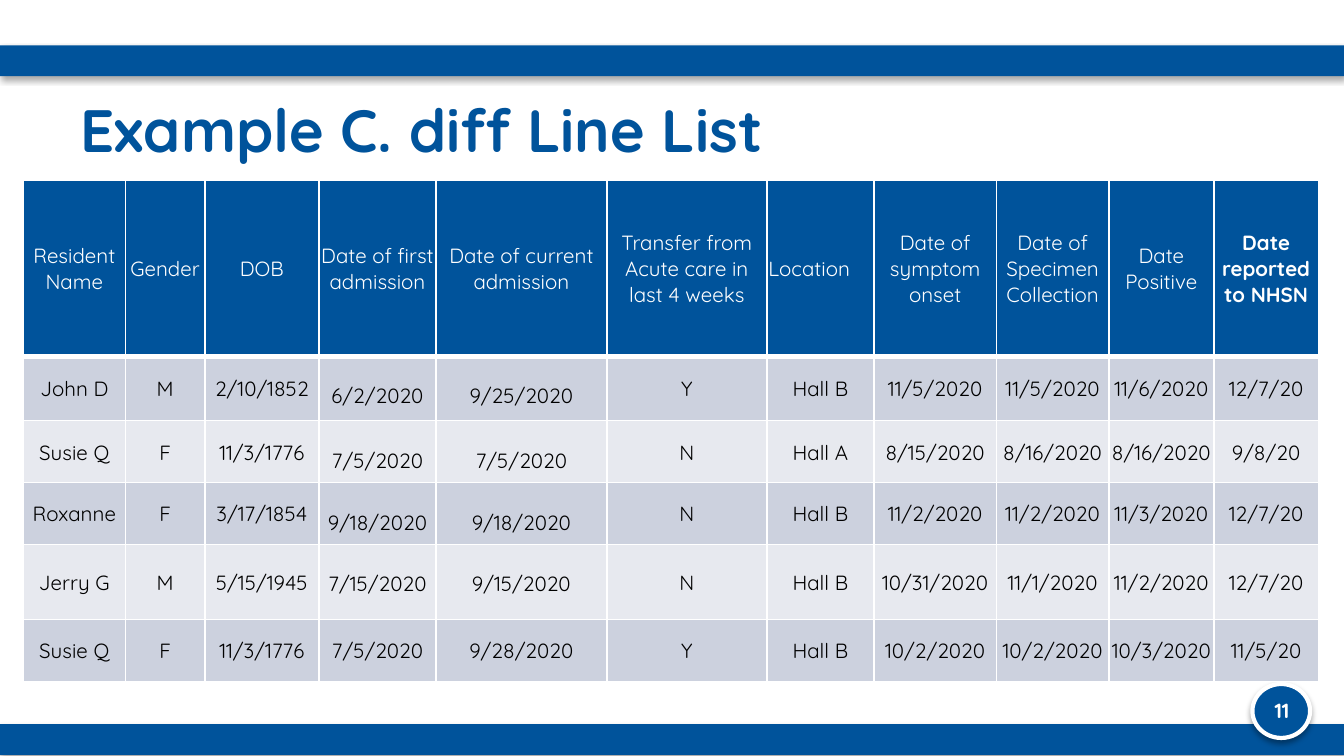
from dataclasses import dataclass

from lxml import etree
from pptx import Presentation
from pptx.dml.color import RGBColor
from pptx.enum.shapes import MSO_SHAPE
from pptx.enum.text import MSO_ANCHOR, MSO_AUTO_SIZE, PP_ALIGN
from pptx.oxml.ns import qn
from pptx.util import Cm, Pt

RECT, OVAL = MSO_SHAPE.RECTANGLE, MSO_SHAPE.OVAL
TOP, MIDDLE = MSO_ANCHOR.TOP, MSO_ANCHOR.MIDDLE
LEFT, CENTER = PP_ALIGN.LEFT, PP_ALIGN.CENTER
NO_AUTOFIT = MSO_AUTO_SIZE.NONE

FONT = "Quicksand"
BLUE, WHITE, BLACK = "00539B", "FFFFFF", "000000"
BANDS = ("CCD1DE", "E7E9EF")
INSET = 0.03
DROPPED_INSET = 0.51  # one text line below the cell's top edge
ADMISSION_COLS = (3, 4)


@dataclass
class Column:
    header: str
    width: float
    align: PP_ALIGN = CENTER
    bold: bool = False


@dataclass
class Case:
    height: float
    values: tuple[str, ...]
    dropped: bool = True  # admission dates sit lower than the other values


@dataclass
class MasterShape:
    kind: MSO_SHAPE
    box: tuple[float, float, float, float]
    outline: float = 0


COLUMNS = [
    Column("Resident Name", 1.93),
    Column("Gender", 1.5),
    Column("DOB", 2.16),
    Column("Date of first admission", 2.21),
    Column("Date of current admission", 3.23),
    Column("Transfer from Acute care in last 4 weeks", 3.02),
    Column("Location", 2.03, align=LEFT),
    Column("Date of symptom onset", 2.31),
    Column("Date of Specimen Collection", 2.13),
    Column("Date Positive", 1.98),
    Column("Date reported to NHSN", 1.98, bold=True),
]
HEADER_HEIGHT = 3.33
CASES = [
    Case(1.22, ("John D", "M", "2/10/1852", "6/2/2020", "9/25/2020", "Y", "Hall B",
                "11/5/2020", "11/5/2020", "11/6/2020", "12/7/20")),
    Case(1.17, ("Susie Q", "F", "11/3/1776", "7/5/2020", "7/5/2020", "N", "Hall A",
                "8/15/2020", "8/16/2020", "8/16/2020", "9/8/20")),
    Case(1.17, ("Roxanne", "F", "3/17/1854", "9/18/2020", "9/18/2020", "N", "Hall B",
                "11/2/2020", "11/2/2020", "11/3/2020", "12/7/20")),
    Case(1.42, ("Jerry G", "M", "5/15/1945", "7/15/2020", "9/15/2020", "N", "Hall B",
                "10/31/2020", "11/1/2020", "11/2/2020", "12/7/20")),
    Case(1.17, ("Susie Q", "F", "11/3/1776", "7/5/2020", "9/28/2020", "Y", "Hall B",
                "10/2/2020", "10/2/2020", "10/3/2020", "11/5/20"), dropped=False),
]
MASTER_SHAPES = [
    MasterShape(RECT, (0, 0.86, 25.43, 0.58)),
    MasterShape(RECT, (0, 13.69, 25.43, 0.58)),
    MasterShape(OVAL, (23.67, 12.93, 1.09, 1.02), outline=2.25),
]


def rgb(color: str) -> RGBColor:
    return RGBColor.from_string(color)


def write(tf, text: str, *, size: float = 11, color: str = BLACK,
          bold: bool = False, align: PP_ALIGN = CENTER) -> None:
    p = tf.paragraphs[0]
    p.alignment = align
    r = p.add_run()
    r.text = text
    r.font.name, r.font.size, r.font.bold = FONT, Pt(size), bold
    r.font.color.rgb = rgb(color)


def add_shadow(sp) -> None:
    sp.shadow.inherit = False
    effects = sp._element.spPr.find(qn("a:effectLst"))
    shadow = etree.SubElement(effects, qn("a:outerShdw"), blurRad=str(Pt(3.1)),
                              dist=str(Pt(1.8)), dir="5400000", rotWithShape="0")
    color = etree.SubElement(shadow, qn("a:srgbClr"), val=BLACK)
    etree.SubElement(color, qn("a:alpha"), val="35000")


def add_master_shape(s, item: MasterShape) -> None:
    sp = s.shapes.add_shape(item.kind, *map(Cm, item.box))
    sp.fill.solid()
    sp.fill.fore_color.rgb = rgb(BLUE)
    if item.outline:
        sp.line.color.rgb = rgb(WHITE)
        sp.line.width = Pt(item.outline)
    else:
        sp.line.fill.background()
    add_shadow(sp)


def add_page_number(s, number: str) -> None:
    sp = s.shapes.add_textbox(Cm(23.67), Cm(13.23), Cm(1.12), Cm(0.41))
    tf = sp.text_frame
    tf.word_wrap = True
    tf.margin_left = tf.margin_right = tf.margin_top = tf.margin_bottom = 0
    tf.vertical_anchor = MIDDLE
    write(tf, number, color=WHITE, bold=True)


def set_title(s, text: str) -> None:
    sp = s.shapes.title
    sp.left, sp.top, sp.width, sp.height = Cm(1.27), Cm(1.63), Cm(22.83), Cm(1.35)
    tf = sp.text_frame
    tf.word_wrap, tf.auto_size, tf.vertical_anchor = True, NO_AUTOFIT, TOP
    write(tf, text, size=32, color=BLUE, bold=True, align=LEFT)


def set_borders(cell, bottom: float) -> None:
    tc_pr = cell._tc.get_or_add_tcPr()
    widths = {"a:lnL": 1, "a:lnR": 1, "a:lnT": 1, "a:lnB": bottom}
    for i, (tag, width) in enumerate(widths.items()):
        ln = etree.Element(qn(tag), w=str(Pt(width)))
        fill = etree.SubElement(ln, qn("a:solidFill"))
        etree.SubElement(fill, qn("a:srgbClr"), val=WHITE)
        tc_pr.insert(i, ln)


def fill_cell(cell, text: str, fill: str, *, bottom: float = 1,
              dropped: bool = False, **text_format) -> None:
    cell.fill.solid()
    cell.fill.fore_color.rgb = rgb(fill)
    set_borders(cell, bottom)
    cell.margin_left = cell.margin_right = Cm(INSET)
    cell.margin_top = Cm(DROPPED_INSET if dropped else INSET)
    cell.margin_bottom = 0
    cell.vertical_anchor = TOP if dropped else MIDDLE
    write(cell.text_frame, text, **text_format)


def add_line_list(s) -> None:
    heights = [HEADER_HEIGHT] + [case.height for case in CASES]
    widths = [col.width for col in COLUMNS]
    table = s.shapes.add_table(len(heights), len(widths), Cm(0.44), Cm(3.4),
                               Cm(sum(widths)), Cm(sum(heights))).table
    for row, height in zip(table.rows, heights):
        row.height = Cm(height)
    for j, col in enumerate(COLUMNS):
        table.columns[j].width = Cm(col.width)
        fill_cell(table.cell(0, j), col.header, BLUE, bottom=3,
                  color=WHITE, bold=col.bold, align=col.align)
    for i, case in enumerate(CASES):
        for j, value in enumerate(case.values):
            fill_cell(table.cell(i + 1, j), value, BANDS[i % 2],
                      dropped=case.dropped and j in ADMISSION_COLS)


def main() -> None:
    prs = Presentation()
    prs.slide_width, prs.slide_height = Cm(25.4), Cm(14.29)
    s = prs.slides.add_slide(prs.slide_layouts[5])
    for item in MASTER_SHAPES:
        add_master_shape(s, item)
    add_page_number(s, "11")
    set_title(s, "Example C. diff Line List")
    add_line_list(s)
    prs.save("out.pptx")


if __name__ == "__main__":
    main()
